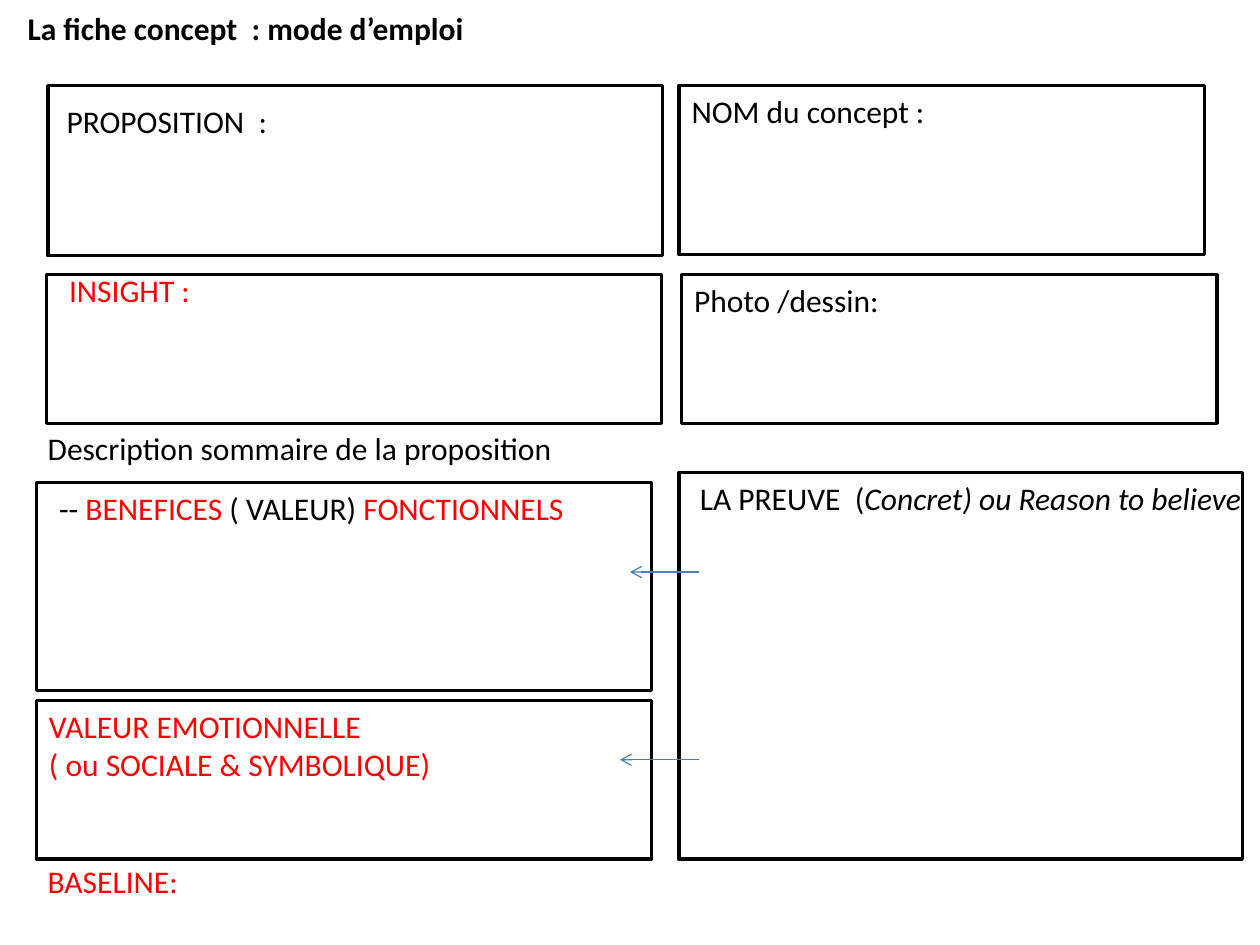
from lxml.etree import SubElement
from pptx import Presentation
from pptx.dml.color import RGBColor
from pptx.enum.shapes import MSO_CONNECTOR as Connector, MSO_SHAPE as Shape
from pptx.enum.text import MSO_ANCHOR as Anchor, MSO_AUTO_SIZE as AutoSize, PP_ALIGN as Align
from pptx.oxml.ns import qn
from pptx.util import Inches, Pt

BLACK = RGBColor(0, 0, 0)
RED = RGBColor(0xFF, 0, 0)
BLUE = RGBColor(0x4B, 0x7E, 0xBC)

LEFT_WIDTH = 4.88
RIGHT = 5.39


def place(shape, left, top, width, height):
    """Move and size a shape, in inches."""
    shape.left, shape.top = Inches(left), Inches(top)
    shape.width, shape.height = Inches(width), Inches(height)


def add_run(paragraph, text, color=BLACK, bold=False, italic=False):
    """Append one formatted run to a paragraph."""
    run = paragraph.add_run()
    run.text = text
    run.font.name = "Calibri"
    run.font.size = Pt(18)
    run.font.bold = bold
    run.font.italic = italic
    run.font.color.rgb = color


def add_title(slide, text, box):
    """Fill the title placeholder."""
    title = slide.shapes.title
    place(title, *box)
    frame = title.text_frame
    frame.word_wrap = True
    frame.auto_size = AutoSize.NONE
    frame.vertical_anchor = Anchor.MIDDLE
    paragraph = frame.paragraphs[0]
    paragraph.alignment = Align.CENTER
    add_run(paragraph, text, bold=True)


def add_label(slide, box, *lines, wrap=False):
    """Add a text box; each line is a list of (text, format) runs."""
    label = slide.shapes.add_textbox(*map(Inches, box))
    frame = label.text_frame
    frame.word_wrap = wrap
    frame.auto_size = AutoSize.SHAPE_TO_FIT_TEXT
    for index, line in enumerate(lines):
        paragraph = frame.add_paragraph() if index else frame.paragraphs[0]
        for text, style in line:
            add_run(paragraph, text, **style)


def add_frame(slide, box):
    """Add an empty outlined rectangle."""
    frame = slide.shapes.add_shape(Shape.RECTANGLE, *map(Inches, box))
    frame.shadow.inherit = False
    frame.fill.background()
    frame.line.color.rgb = BLACK
    frame.line.width = Pt(2)


def add_arrow(slide, start, end, y):
    """Add a thin horizontal arrow pointing at its end."""
    arrow = slide.shapes.add_connector(
        Connector.STRAIGHT, Inches(start), Inches(y), Inches(end), Inches(y))
    arrow.line.color.rgb = BLUE
    arrow.line.width = Pt(0.75)
    SubElement(arrow.line._get_or_add_ln(), qn("a:tailEnd"), type="arrow")
    SubElement(arrow._element.spPr, qn("a:effectLst"))


def add_concept(slide):
    """Add the proposition, name, insight and drawing fields."""
    add_frame(slide, (0.38, 0.68, LEFT_WIDTH, 1.35))
    add_label(slide, (0.43, 0.76, 1.81, 0.4), [("PROPOSITION  :", {})])
    add_frame(slide, (RIGHT, 0.68, 4.17, 1.34))
    add_label(slide, (RIGHT, 0.68, 2.08, 0.4), [("NOM du concept :", {})])
    add_frame(slide, (0.37, 2.18, LEFT_WIDTH, 1.18))
    add_label(slide, (0.45, 2.1, 1.17, 0.4), [("INSIGHT :", {"color": RED})])
    add_frame(slide, (5.41, 2.18, 4.25, 1.18))
    add_label(slide, (5.41, 2.18, 1.68, 0.4), [("Photo /dessin:", {})])


def add_description(slide):
    """Add the benefits, emotional value, proof and baseline fields."""
    red = {"color": RED}
    add_label(slide, (0.28, 3.36, 4.25, 0.4),
              [("Description sommaire de la proposition", {})])
    add_frame(slide, (0.29, 3.83, LEFT_WIDTH, 1.65))
    add_label(slide, (0.37, 3.83, 4.25, 0.4),
              [("-- ", {}), ("BENEFICES", red), (" ( VALEUR) ", {}), ("FONCTIONNELS", red)])
    add_frame(slide, (0.29, 5.56, LEFT_WIDTH, 1.26))
    add_label(slide, (0.29, 5.56, 4.72, 0.71),
              [("VALEUR EMOTIONNELLE", red)],
              [("( ou SOCIALE & SYMBOLIQUE)", red)], wrap=True)
    add_frame(slide, (RIGHT, 3.75, 4.47, 3.07))
    add_label(slide, (5.4, 3.75, 4.6, 0.4),
              [(" LA PREUVE  (", {}), ("Concret) ou Reason to believe", {"italic": True})])
    add_label(slide, (0.28, 6.79, LEFT_WIDTH, 0.4), [("BASELINE:", red)], wrap=True)
    add_arrow(slide, 5.55, 5, 4.54)
    add_arrow(slide, 5.55, 4.92, 6.03)


def main():
    """Build and save the concept sheet."""
    presentation = Presentation()
    presentation.slide_width, presentation.slide_height = Inches(10), Inches(7.5)
    slide = presentation.slides.add_slide(presentation.slide_layouts[5])
    add_title(slide, "La fiche concept  : mode d’emploi", (0, 0, 3.9, 0.44))
    add_concept(slide)
    add_description(slide)
    presentation.save("out.pptx")


if __name__ == "__main__":
    main()
